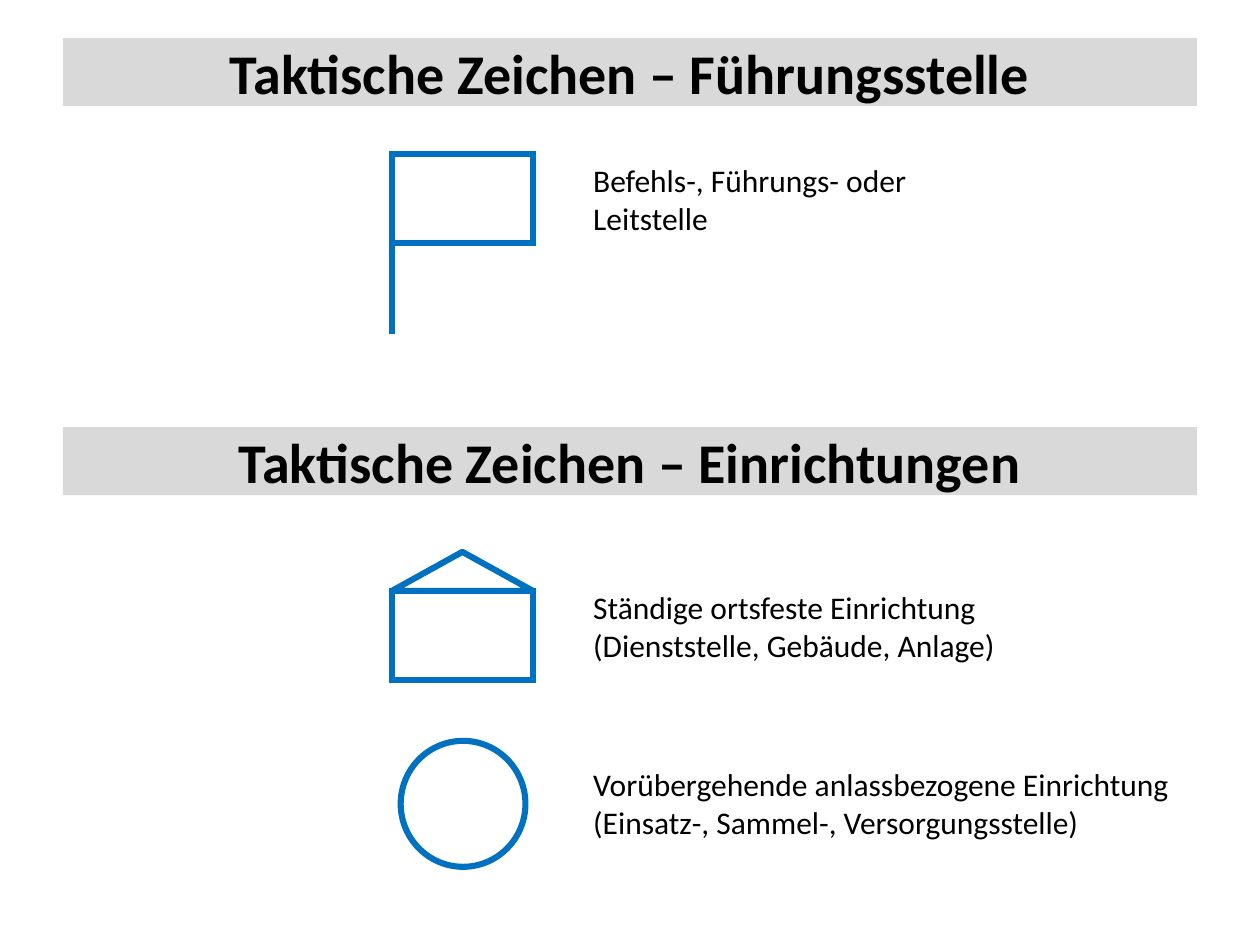
from dataclasses import dataclass

from lxml.etree import SubElement
from pptx import Presentation
from pptx.dml.color import RGBColor
from pptx.enum.shapes import MSO_CONNECTOR as Connector, MSO_SHAPE as Shape
from pptx.enum.text import MSO_ANCHOR as Anchor, MSO_AUTO_SIZE as AutoSize, PP_ALIGN as Align
from pptx.oxml.ns import qn
from pptx.util import Inches, Pt


@dataclass(frozen=True)
class Theme:
    """Colours, font and sizes of the slide."""
    font: str = "Calibri"
    text: RGBColor = RGBColor(0x00, 0x00, 0x00)
    banner: RGBColor = RGBColor(0xD9, 0xD9, 0xD9)
    paper: RGBColor = RGBColor(0xFF, 0xFF, 0xFF)
    sign: RGBColor = RGBColor(0x00, 0x70, 0xC0)
    title_size: Pt = Pt(32)
    label_size: Pt = Pt(18)
    stroke: Pt = Pt(3.5)


THEME = Theme()
SIGN_LEFT, SIGN_WIDTH, SIGN_HEIGHT = 3.11, 1.12, 0.71
LABEL_LEFT, LABEL_HEIGHT = 4.61, 0.71


def write(frame, text, size, bold=False, align=Align.LEFT, anchor=Anchor.TOP, wrap=True,
          fit=AutoSize.NONE):
    """Fill a text frame with one formatted paragraph."""
    frame.word_wrap = wrap
    frame.auto_size = fit
    frame.vertical_anchor = anchor
    para = frame.paragraphs[0]
    para.text = text
    para.alignment = align
    for span in para.runs:
        span.font.name = THEME.font
        span.font.size = size
        span.font.bold = bold
        span.font.color.rgb = THEME.text


def add_banner(box, text, left, top, width, height):
    """Turn a title or rectangle into a grey heading bar."""
    box.left, box.top, box.width, box.height = map(Inches, (left, top, width, height))
    box.fill.solid()
    box.fill.fore_color.rgb = THEME.banner
    box.line.fill.background()
    write(box.text_frame, text, THEME.title_size, bold=True, align=Align.CENTER,
          anchor=Anchor.MIDDLE)


def add_label(shapes, text, top, width):
    """Add the explanation beside a sign."""
    box = shapes.add_textbox(*map(Inches, (LABEL_LEFT, top, width, LABEL_HEIGHT)))
    write(box.text_frame, text, THEME.label_size, wrap=False, fit=AutoSize.SHAPE_TO_FIT_TEXT)


def add_outline(shapes, kind, left, top, width, height):
    """Add a white shape with the blue sign outline."""
    shape = shapes.add_shape(kind, *map(Inches, (left, top, width, height)))
    shape.shadow.inherit = False
    shape.fill.solid()
    shape.fill.fore_color.rgb = THEME.paper
    shape.line.color.rgb = THEME.sign
    shape.line.width = THEME.stroke
    if kind == Shape.RECTANGLE:
        line = shape.element.spPr.find(qn("a:ln"))
        SubElement(line, qn("a:miter"), lim="800000")


def add_flag(shapes, left, top, width, height):
    """Draw the command post sign: a flag on a pole."""
    group = shapes.add_group_shape().shapes
    add_outline(group, Shape.RECTANGLE, left, top, width, height)
    pole = group.add_connector(Connector.STRAIGHT, *map(
        Inches, (left, top + height, left, top + 2 * height + 0.01)))
    pole.line.color.rgb = THEME.sign
    pole.line.width = THEME.stroke
    SubElement(pole.element.spPr, qn("a:effectLst"))


def add_house(shapes, left, top, width, height, roof=0.31):
    """Draw the permanent facility sign: walls below a roof."""
    group = shapes.add_group_shape().shapes
    add_outline(group, Shape.RECTANGLE, left, top + roof, width, height)
    add_outline(group, Shape.ISOSCELES_TRIANGLE, left, top, width, roof)


def build_slide(deck):
    """Place both headings, the three signs and their labels."""
    page = deck.slides.add_slide(deck.slide_layouts[5])
    shapes = page.shapes
    add_banner(shapes.title, "Taktische Zeichen – Führungsstelle", 0.5, 0.3, 9, 0.54)
    second = shapes.add_shape(Shape.RECTANGLE, 0, 0, 0, 0)
    second.shadow.inherit = False
    add_banner(second, "Taktische Zeichen – Einrichtungen", 0.5, 3.39, 9, 0.54)

    add_flag(shapes, SIGN_LEFT, 1.22, SIGN_WIDTH, SIGN_HEIGHT)
    add_house(shapes, SIGN_LEFT, 4.38, SIGN_WIDTH, SIGN_HEIGHT)
    add_outline(shapes, Shape.OVAL, 3.18, 5.88, 0.99, 1)

    for text, top, width in (
        ("Befehls-, Führungs- oder\nLeitstelle", 1.23, 2.72),
        ("Ständige ortsfeste Einrichtung\n(Dienststelle, Gebäude, Anlage)", 4.62, 3.43),
        ("Vorübergehende anlassbezogene Einrichtung\n(Einsatz-, Sammel-, Versorgungsstelle)",
         6.02, 4.83),
    ):
        add_label(shapes, text, top, width)


def main():
    """Build and save the deck."""
    deck = Presentation()
    deck.slide_width, deck.slide_height = Inches(10), Inches(7.5)
    build_slide(deck)
    deck.save("out.pptx")


if __name__ == "__main__":
    main()
